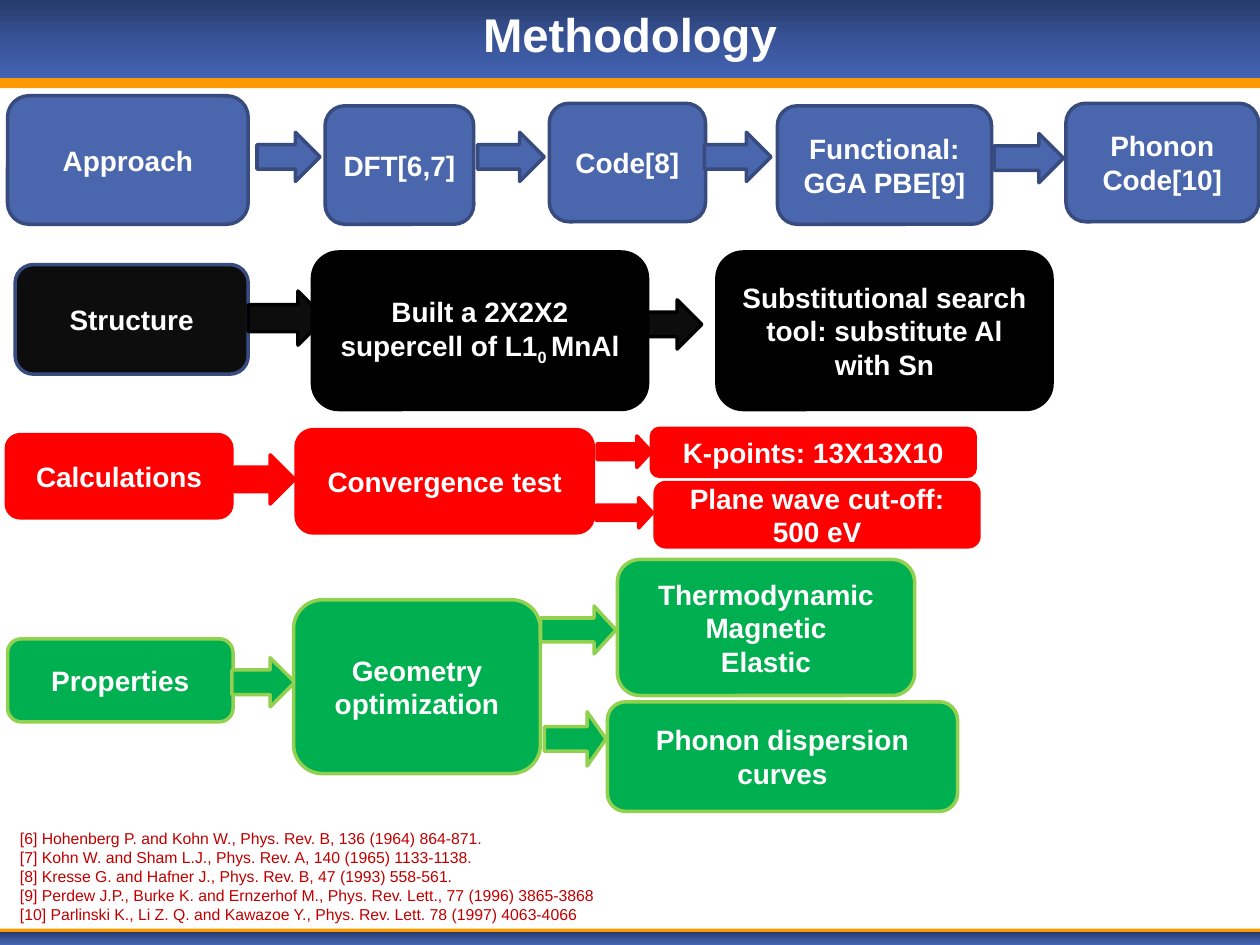
from copy import deepcopy
from dataclasses import dataclass
from typing import Optional

from pptx import Presentation
from pptx.dml.color import RGBColor
from pptx.enum.shapes import MSO_SHAPE
from pptx.enum.text import MSO_ANCHOR, PP_ALIGN
from pptx.oxml.ns import qn
from pptx.util import Inches, Pt

WHITE = RGBColor(0xFF, 0xFF, 0xFF)
BLACK = RGBColor(0x00, 0x00, 0x00)
CHARCOAL = RGBColor(0x0D, 0x0D, 0x0D)
BLUE = RGBColor(0x4A, 0x66, 0xAC)
DARK_BLUE = RGBColor(0x37, 0x4B, 0x7F)
RED = RGBColor(0xFF, 0x00, 0x00)
GREEN = RGBColor(0x00, 0xB0, 0x50)
LIME = RGBColor(0x92, 0xD0, 0x50)
ORANGE = RGBColor(0xFF, 0x99, 0x00)
MAROON = RGBColor(0xC0, 0x00, 0x00)
BAND_COLORS = (
    RGBColor(0x27, 0x3B, 0x6A),
    RGBColor(0x38, 0x53, 0x97),
    RGBColor(0x43, 0x63, 0xB3),
)

HEADING = {"name": "Arial", "size": Pt(27), "bold": True}
LABEL = {"name": "Arial", "size": Pt(16), "bold": True}
REFERENCE = {"name": "Arial", "size": Pt(9), "bold": False}

REFERENCES = (
    "[6] Hohenberg P. and Kohn W., Phys. Rev. B, 136 (1964) 864-871.",
    "[7] Kohn W. and Sham L.J., Phys. Rev. A, 140 (1965) 1133-1138.",
    "[8] Kresse G. and Hafner J., Phys. Rev. B, 47 (1993) 558-561.",
    "[9] Perdew J.P., Burke K. and Ernzerhof M., Phys. Rev. Lett., 77 (1996) 3865-3868",
    "[10] Parlinski K., Li Z. Q. and Kawazoe Y., Phys. Rev. Lett. 78 (1997) 4063-4066",
)


@dataclass(frozen=True)
class Palette:
    fill: RGBColor
    line: RGBColor


@dataclass(frozen=True)
class Step:
    left: float
    top: float
    width: float
    height: float
    paragraphs: tuple[str, ...]
    palette: Optional[Palette] = None


@dataclass(frozen=True)
class Arrow:
    left: float
    top: float
    width: float = 0.53
    height: float = 0.39
    adjustments: tuple[float, float] = (0.5, 0.5)


@dataclass(frozen=True)
class Stage:
    palette: Palette
    flow: tuple


SLIM = (0.5, 0.46)

STAGES = (
    Stage(Palette(BLUE, DARK_BLUE), (
        Step(0.06, 0.76, 1.91, 1.02, ("Approach",)),
        Arrow(2.04, 1.05, 0.5),
        Step(2.58, 0.84, 1.18, 0.94, ("DFT[6,7]",)),
        Arrow(3.79, 1.05),
        Step(4.36, 0.82, 1.24, 0.94, ("Code[8]",)),
        Arrow(5.59, 1.05),
        Step(6.17, 0.84, 1.7, 0.94, ("Functional: GGA PBE[9]",)),
        Arrow(7.89, 1.06, 0.55),
        Step(8.46, 0.82, 1.53, 0.94, ("Phonon Code[10]",)),
    )),
    Stage(Palette(CHARCOAL, BLACK), (
        Step(0.12, 2.1, 1.85, 0.87, ("Structure",), Palette(CHARCOAL, DARK_BLUE)),
        Arrow(1.97, 2.31, 0.61, 0.43),
        Arrow(5.04, 2.38),
        Step(2.48, 2, 2.66, 1.25, ("Built a 2X2X2 supercell of L1|0 |MnAl",), Palette(BLACK, BLACK)),
        Step(5.69, 2, 2.66, 1.25, ("Substitutional search tool: substitute Al with Sn",), Palette(BLACK, BLACK)),
    )),
    Stage(Palette(RED, RED), (
        Step(0.05, 3.45, 1.79, 0.66, ("Calculations",)),
        Step(2.35, 3.41, 2.36, 0.82, ("Convergence test",)),
        Arrow(1.86, 3.61, 0.48),
        Arrow(4.74, 3.46, 0.43, 0.25, SLIM),
        Arrow(4.73, 3.95, 0.45, 0.24, SLIM),
        Step(5.17, 3.4, 2.57, 0.38, ("K-points: 13X13X10",)),
        Step(5.2, 3.83, 2.57, 0.51, ("Plane wave cut-off: 500 eV",)),
    )),
    Stage(Palette(GREEN, LIME), (
        Step(0.06, 5.07, 1.79, 0.66, ("Properties",)),
        Arrow(1.84, 5.22, 0.5),
        Step(2.33, 4.76, 1.96, 1.38, ("Geometry", "optimization")),
        Arrow(4.29, 4.81, 0.6, 0.38, SLIM),
        Step(4.9, 4.44, 2.36, 1.08, ("Thermodynamic", "Magnetic", "Elastic")),
        Arrow(4.32, 5.65, 0.49, 0.43, (0.45, 0.35)),
        Step(4.82, 5.57, 2.78, 0.87, ("Phonon dispersion curves",)),
    )),
)


def format_font(font, color: RGBColor, values: dict) -> None:
    for attribute, value in values.items():
        setattr(font, attribute, value)
    font.color.rgb = color


def write_paragraphs(frame, texts: tuple[str, ...], color: RGBColor, values: dict, alignment) -> None:
    for index, text in enumerate(texts):
        paragraph = frame.paragraphs[0] if index == 0 else frame.add_paragraph()
        paragraph.alignment = alignment
        for position, piece in enumerate(text.split("|")):
            run = paragraph.add_run()
            run.text = piece
            format_font(run.font, color, values)
            if position % 2:
                run._r.get_or_add_rPr().set("baseline", "-25000")


def add_filled(slide, kind, left: float, top: float, width: float, height: float, color: RGBColor):
    shape = slide.shapes.add_shape(kind, Inches(left), Inches(top), Inches(width), Inches(height))
    shape.shadow.inherit = False
    shape.fill.solid()
    shape.fill.fore_color.rgb = color
    shape.line.fill.background()
    return shape


def add_band(slide, top: float, height: float) -> None:
    band = add_filled(slide, MSO_SHAPE.RECTANGLE, 0, top, 10, height, BAND_COLORS[0])
    band.fill.gradient()
    band.fill.gradient_angle = 270
    stop_list = next(band.element.iter(qn("a:gsLst")))
    stop_list.insert(1, deepcopy(stop_list[0]))
    for index, (stop, color) in enumerate(zip(band.fill.gradient_stops, BAND_COLORS)):
        stop.position = index / 2
        stop.color.rgb = color


def add_flow_item(slide, item, palette: Palette) -> None:
    is_step = isinstance(item, Step)
    kind = MSO_SHAPE.ROUNDED_RECTANGLE if is_step else MSO_SHAPE.RIGHT_ARROW
    shape = add_filled(slide, kind, item.left, item.top, item.width, item.height, palette.fill)
    shape.line.color.rgb = palette.line
    shape.line.width = Pt(2)
    if is_step:
        shape.text_frame.word_wrap = True
        shape.text_frame.vertical_anchor = MSO_ANCHOR.MIDDLE
        write_paragraphs(shape.text_frame, item.paragraphs, WHITE, LABEL, PP_ALIGN.CENTER)
    else:
        for index, value in enumerate(item.adjustments):
            shape.adjustments[index] = value


def add_title(slide) -> None:
    title = slide.shapes.title
    bounds = {"left": 0.5, "top": 0, "width": 9, "height": 0.54}
    for attribute, value in bounds.items():
        setattr(title, attribute, Inches(value))
    title.text_frame.vertical_anchor = MSO_ANCHOR.MIDDLE
    write_paragraphs(title.text_frame, ("Methodology",), WHITE, HEADING, PP_ALIGN.CENTER)
    title.element.getparent().append(title.element)


def add_references(slide) -> None:
    references = slide.shapes.add_textbox(Inches(0.06), Inches(6.53), Inches(8.11), Inches(0.86))
    references.text_frame.word_wrap = True
    write_paragraphs(references.text_frame, REFERENCES, MAROON, REFERENCE, PP_ALIGN.LEFT)


def main() -> None:
    presentation = Presentation()
    presentation.slide_width = Inches(10)
    presentation.slide_height = Inches(7.5)
    slide = presentation.slides.add_slide(presentation.slide_layouts[5])
    for stripe_top, stripe_height, band_top, band_height in ((7.37, 0.05, 7.4, 0.1), (0.38, 0.32, 0, 0.62)):
        add_filled(slide, MSO_SHAPE.RECTANGLE, 0, stripe_top, 10, stripe_height, ORANGE)
        add_band(slide, band_top, band_height)
    add_title(slide)
    add_references(slide)
    for stage in STAGES:
        for item in stage.flow:
            add_flow_item(slide, item, getattr(item, "palette", None) or stage.palette)
    presentation.save("out.pptx")


if __name__ == "__main__":
    main()
